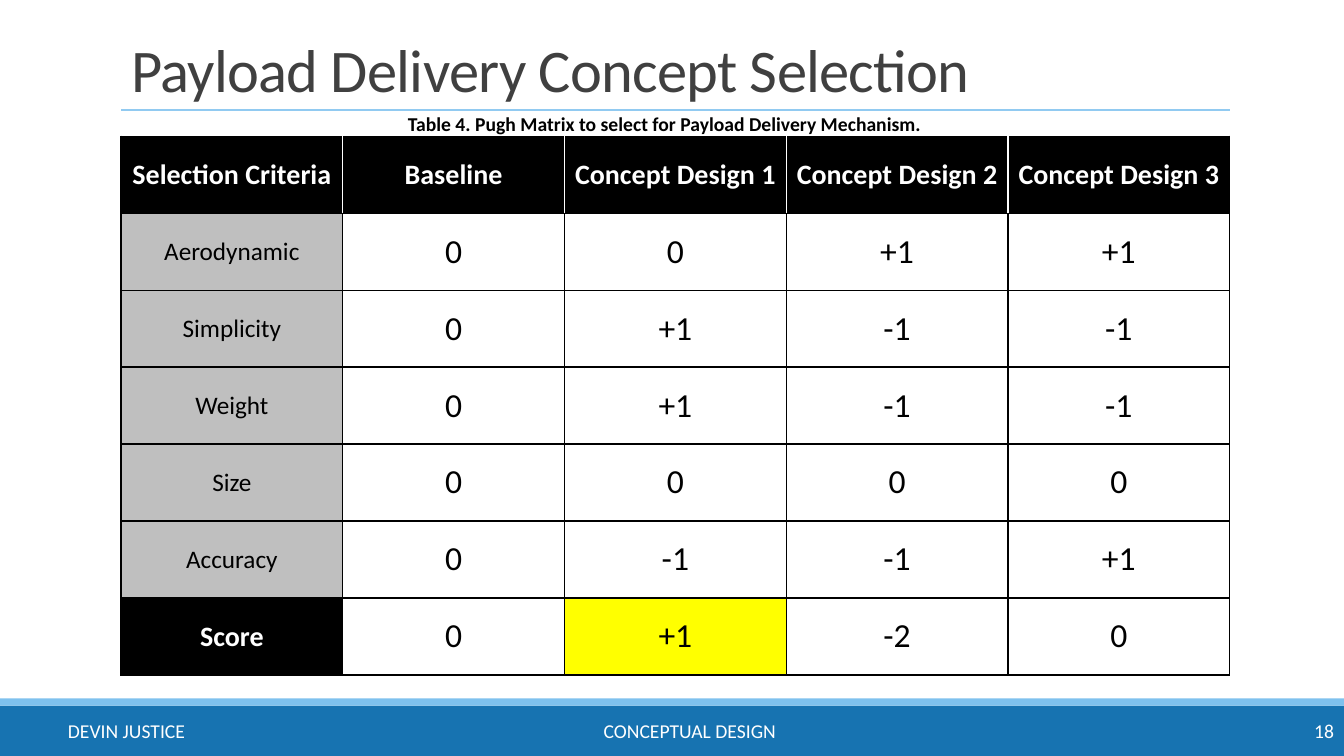
from pptx import Presentation
from pptx.dml.color import RGBColor
from pptx.enum.shapes import MSO_CONNECTOR, MSO_SHAPE
from pptx.enum.text import MSO_ANCHOR, PP_ALIGN
from pptx.oxml.ns import qn
from pptx.util import Cm, Pt
from lxml.etree import SubElement

BLACK = RGBColor(0x00, 0x00, 0x00)
WHITE = RGBColor(0xFF, 0xFF, 0xFF)
CHARCOAL = RGBColor(0x40, 0x40, 0x40)
GREY = RGBColor(0xBF, 0xBF, 0xBF)
YELLOW = RGBColor(0xFF, 0xFF, 0x00)
BLUE = RGBColor(0x17, 0x73, 0xB1)
LIGHT_BLUE = RGBColor(0x7E, 0xC1, 0xEE)
RULE_BLUE = RGBColor(0x91, 0xCA, 0xF1)

LEFT, WIDTH = 3.05, 27.94
ROW_HEIGHT = 1.94
MATRIX = [
    ["Selection Criteria", "Baseline", "Concept Design 1", "Concept Design 2", "Concept Design 3"],
    ["Aerodynamic", "0", "0", "+1", "+1"],
    ["Simplicity", "0", "+1", "-1", "-1"],
    ["Weight", "0", "+1", "-1", "-1"],
    ["Size", "0", "0", "0", "0"],
    ["Accuracy", "0", "-1", "-1", "+1"],
    ["Score", "0", "+1", "-2", "0"],
]
SCORE_ROW = len(MATRIX) - 1
LAST_COLUMN = len(MATRIX[0]) - 1
BEST_CELL = (SCORE_ROW, 2)


def write(frame, text, size, color, bold=False, align=PP_ALIGN.LEFT):
    para = frame.paragraphs[0]
    para.alignment = align
    span = para.add_run()
    span.text = text
    span.font.name = "Calibri"
    span.font.size = Pt(size)
    span.font.bold = bold
    span.font.color.rgb = color
    return para, span


def add_border(cell, side, color):
    line = SubElement(cell._tc.get_or_add_tcPr(), qn(f"a:ln{side}"), w=str(Pt(1)))
    fill = SubElement(line, qn("a:solidFill"))
    SubElement(fill, qn("a:srgbClr"), val=str(color))


deck = Presentation()
deck.slide_width, deck.slide_height = Cm(33.87), Cm(19.05)
page = deck.slides.add_slide(deck.slide_layouts[5])

for top, height, color in [(17.78, 1.27, BLUE), (17.6, 0.18, LIGHT_BLUE)]:
    band = page.shapes.add_shape(MSO_SHAPE.RECTANGLE, 0, Cm(top), deck.slide_width, Cm(height))
    band.shadow.inherit = False
    band.fill.solid()
    band.fill.fore_color.rgb = color
    band.line.fill.background()

rule = page.shapes.add_connector(
    MSO_CONNECTOR.STRAIGHT, Cm(LEFT), Cm(2.77), Cm(LEFT + WIDTH), Cm(2.77))
rule.line.color.rgb = RULE_BLUE
rule.line.width = Pt(2)
SubElement(rule._element.spPr, qn("a:effectLst"))

title = page.shapes.title
title.left, title.top, title.width, title.height = Cm(LEFT), Cm(0.79), Cm(WIDTH), Cm(1.98)
title.text_frame.vertical_anchor = MSO_ANCHOR.BOTTOM
title.text_frame.word_wrap = True
para, span = write(title.text_frame, "Payload Delivery Concept Selection", 43.2, CHARCOAL)
para.line_spacing = 0.85
span.font._element.set("spc", "-50")

for text, left, width, align in [
    ("CONCEPTUAL DESIGN", 10.69, 13.39, PP_ALIGN.CENTER),
    ("18", 32.65, 1.22, PP_ALIGN.RIGHT),
    ("DEVIN JUSTICE", 0, 6.38, PP_ALIGN.CENTER),
]:
    box = page.shapes.add_textbox(Cm(left), Cm(17.91), Cm(width), Cm(1.02))
    box.text_frame.word_wrap = True
    box.text_frame.vertical_anchor = MSO_ANCHOR.MIDDLE
    write(box.text_frame, text, 14, WHITE, align=align)

table = page.shapes.add_table(
    len(MATRIX), len(MATRIX[0]), Cm(LEFT), Cm(3.43),
    Cm(WIDTH), Cm(ROW_HEIGHT * len(MATRIX))).table
for column in table.columns:
    column.width = Cm(WIDTH / len(MATRIX[0]))

for r, values in enumerate(MATRIX):
    table.rows[r].height = Cm(ROW_HEIGHT)
    for c, value in enumerate(values):
        if r == 0 or (r == SCORE_ROW and c == 0):
            fill, color, size, bold = BLACK, WHITE, 20, True
        elif c == 0:
            fill, color, size, bold = GREY, BLACK, 18, False
        else:
            fill, color, size, bold = WHITE, BLACK, 24, False
        if (r, c) == BEST_CELL:
            fill = YELLOW
        cell = table.cell(r, c)
        add_border(cell, "L", WHITE if r == 0 and c > 0 else BLACK)
        add_border(cell, "R", WHITE if r == 0 and c < LAST_COLUMN else BLACK)
        add_border(cell, "T", BLACK)
        add_border(cell, "B", BLACK)
        cell.fill.solid()
        cell.fill.fore_color.rgb = fill
        cell.vertical_anchor = MSO_ANCHOR.MIDDLE
        write(cell.text_frame, value, size, color, bold, PP_ALIGN.CENTER)

caption = page.shapes.add_textbox(Cm(10.03), Cm(2.69), Cm(13.77), Cm(0.86))
caption.text_frame.word_wrap = True
write(caption.text_frame, "Table 4. Pugh Matrix to select for Payload Delivery Mechanism.",
      14, BLACK, bold=True)

deck.save("out.pptx")
